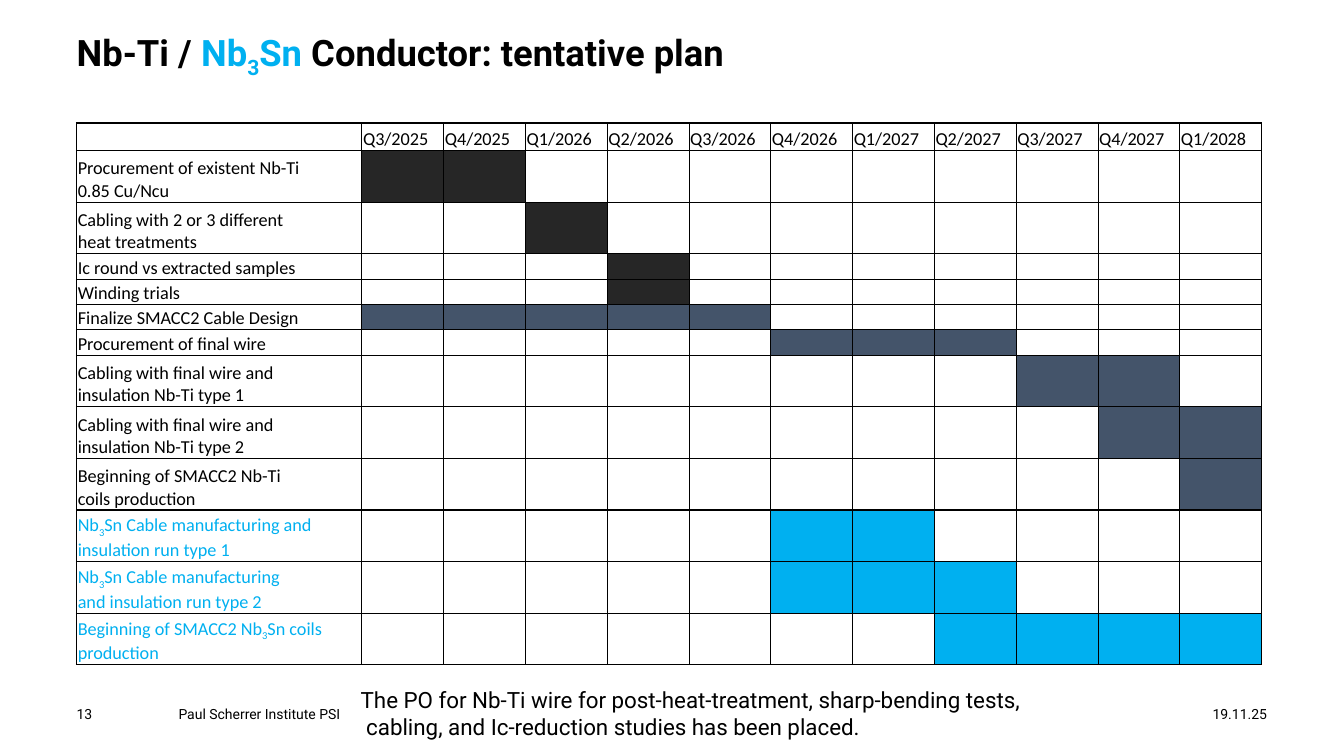
"""Build the conductor planning slide with its quarterly Gantt table."""
import lxml.etree
import pptx
import pptx.dml.color
import pptx.enum.text
import pptx.oxml.ns
import pptx.util
from dataclasses import dataclass

Cm = pptx.util.Cm
Pt = pptx.util.Pt
PP = pptx.enum.text


@dataclass(frozen=True)
class Theme:
    """Colours, fonts, type sizes and line widths."""
    black: str = "000000"
    sky: str = "00B0F0"
    trial: str = "262626"
    wire: str = "44546A"
    heading: str = "Roboto"
    body: str = "Calibri"
    title_size: int = 26
    note_size: int = 16
    table_size: int = 13
    footer_size: int = 10
    thick: float = 1
    thin: float = 0.5


theme = Theme()

TITLE = [("Nb-Ti / ", theme.black), ("Nb~3~Sn", theme.sky),
         (" Conductor: tentative plan", theme.black)]
QUARTERS = ["Q3/2025", "Q4/2025", "Q1/2026", "Q2/2026", "Q3/2026", "Q4/2026",
            "Q1/2027", "Q2/2027", "Q3/2027", "Q4/2027", "Q1/2028"]
TASKS = [
    ("Procurement of existent Nb-Ti\n0.85 Cu/Ncu", "Q3/2025", "Q4/2025", theme.trial),
    ("Cabling with 2 or 3 different\nheat treatments", "Q1/2026", "Q1/2026", theme.trial),
    ("Ic round vs extracted samples", "Q2/2026", "Q2/2026", theme.trial),
    ("Winding trials", "Q2/2026", "Q2/2026", theme.trial),
    ("Finalize SMACC2 Cable Design", "Q3/2025", "Q3/2026", theme.wire),
    ("Procurement of final wire", "Q4/2026", "Q2/2027", theme.wire),
    ("Cabling with final wire and\ninsulation Nb-Ti type 1", "Q3/2027", "Q4/2027", theme.wire),
    ("Cabling with final wire and\ninsulation Nb-Ti type 2", "Q4/2027", "Q1/2028", theme.wire),
    ("Beginning of SMACC2 Nb-Ti\ncoils production", "Q1/2028", "Q1/2028", theme.wire),
    ("Nb~3~Sn Cable manufacturing and\ninsulation run type 1", "Q4/2026", "Q1/2027", theme.sky),
    ("Nb~3~Sn Cable manufacturing\nand insulation run type 2", "Q4/2026", "Q2/2027", theme.sky),
    ("Beginning of SMACC2 Nb~3~Sn coils\nproduction", "Q2/2027", "Q1/2028", theme.sky),
]
NOTE = ["The PO for Nb-Ti wire for post-heat-treatment, sharp-bending tests,",
        "cabling, and Ic-reduction studies has been placed."]
LEFT = 1.93
FOOTER = [("19.11.25", 27.43, 4.5, PP.PP_ALIGN.RIGHT),
          ("Paul Scherrer Institute PSI", 4.5, 22.35, PP.PP_ALIGN.LEFT),
          ("13", LEFT, 1.96, PP.PP_ALIGN.LEFT)]
TABLE_TOP, TABLE_WIDTH, LABEL_WIDTH = 3.1, 29.87, 7.19
HEADER_HEIGHT, SINGLE_HEIGHT, DOUBLE_HEIGHT = 0.69, 0.64, 1.3
THICK_ROW_EDGES = {0, 1, 10, len(TASKS) + 1}
THICK_COLUMN_EDGES = {0, 1, len(QUARTERS) + 1}


def assign(target, values):
    """Set each named attribute on the target."""
    for name, value in values.items():
        setattr(target, name, value)


def write(para, text, size, face, color=theme.black, bold=False):
    """Add text to a paragraph, with ~x~ as subscript and newlines as breaks."""
    for row, line in enumerate(text.split("\n")):
        if row:
            para.add_line_break()
            lxml.etree.SubElement(para._p[-1], pptx.oxml.ns.qn("a:rPr"), sz=str(size * 100))
        for index, piece in enumerate(line.split("~")):
            span = para.add_run()
            span.text = piece
            assign(span.font, {"size": Pt(size), "name": face, "bold": bold})
            span.font.color.rgb = pptx.dml.color.RGBColor.from_string(color)
            if index % 2:
                span.font._element.set("baseline", "-25000")


def prepare(frame, wrap=True):
    """Clear the insets of a text frame and anchor it at the top."""
    assign(frame, {"margin_left": 0, "margin_right": 0, "margin_top": 0, "margin_bottom": 0,
                   "word_wrap": wrap, "vertical_anchor": PP.MSO_ANCHOR.TOP,
                   "auto_size": PP.MSO_AUTO_SIZE.NONE})


def add_text(page, lines, place, size, align=PP.PP_ALIGN.LEFT):
    """Add a text box with one paragraph per line."""
    frame = page.shapes.add_textbox(*map(Cm, place)).text_frame
    prepare(frame)
    for index, line in enumerate(lines):
        para = frame.add_paragraph() if index else frame.paragraphs[0]
        para.alignment = align
        write(para, line, size, theme.heading)
    return frame


def add_title(page):
    """Fill and place the title."""
    box = page.shapes.title
    assign(box, {"left": Cm(LEFT), "top": Cm(0.76), "width": Cm(24.9), "height": Cm(2.26)})
    prepare(box.text_frame)
    para = box.text_frame.paragraphs[0]
    para.alignment = PP.PP_ALIGN.LEFT
    for text, color in TITLE:
        write(para, text, theme.title_size, theme.heading, color, True)


def format_cell(cell, row, column, fill):
    """Set the borders, insets and fill of a cell."""
    assign(cell, {"margin_left": Cm(0.03), "margin_right": Cm(0.03), "margin_top": Cm(0.03),
                  "margin_bottom": 0, "vertical_anchor": PP.MSO_ANCHOR.BOTTOM})
    edges = {"lnL": column in THICK_COLUMN_EDGES, "lnR": column + 1 in THICK_COLUMN_EDGES,
             "lnT": row in THICK_ROW_EDGES, "lnB": row + 1 in THICK_ROW_EDGES}
    qn = pptx.oxml.ns.qn
    for tag, is_thick in edges.items():
        width = theme.thick if is_thick else theme.thin
        line = lxml.etree.SubElement(cell._tc.get_or_add_tcPr(), qn("a:" + tag), w=str(Pt(width)))
        paint = lxml.etree.SubElement(line, qn("a:solidFill"))
        lxml.etree.SubElement(paint, qn("a:srgbClr"), val=theme.black)
    if fill:
        cell.fill.solid()
        cell.fill.fore_color.rgb = pptx.dml.color.RGBColor.from_string(fill)
    else:
        cell.fill.background()


def add_plan(page):
    """Add the Gantt table."""
    heights = [HEADER_HEIGHT] + [DOUBLE_HEIGHT if "\n" in task[0] else SINGLE_HEIGHT
                                 for task in TASKS]
    quarter_width = (TABLE_WIDTH - LABEL_WIDTH) / len(QUARTERS)
    widths = [LABEL_WIDTH] + [quarter_width] * len(QUARTERS)
    place = map(Cm, (LEFT, TABLE_TOP, TABLE_WIDTH, sum(heights)))
    plan = page.shapes.add_table(len(heights), len(widths), *place).table
    assign(plan, {"first_row": False, "horz_banding": False})
    for column, width in zip(plan.columns, widths):
        column.width = Cm(width)
    for row, height in enumerate(heights):
        plan.rows[row].height = Cm(height)
        label, start, end, color = TASKS[row - 1] if row else ("", "", "", "")
        for column in range(len(widths)):
            text, fill = "", None
            if column == 0:
                text = label
            elif row == 0:
                text = QUARTERS[column - 1]
            elif QUARTERS.index(start) < column <= QUARTERS.index(end) + 1:
                fill = color
            cell = plan.cell(row, column)
            format_cell(cell, row, column, fill)
            para = cell.text_frame.paragraphs[0]
            if text:
                ink = theme.sky if color == theme.sky else theme.black
                write(para, text, theme.table_size, theme.body, ink)
            else:
                lxml.etree.SubElement(para._p, pptx.oxml.ns.qn("a:endParaRPr"),
                                      sz=str(theme.table_size * 100))


def main():
    """Assemble and save the deck."""
    deck = pptx.Presentation()
    assign(deck, {"slide_width": Cm(33.87), "slide_height": Cm(19.05)})
    page = deck.slides.add_slide(deck.slide_layouts[5])
    add_title(page)
    for text, left, width, align in FOOTER:
        add_text(page, [text], (left, 17.78, width, 0.41), theme.footer_size, align)
    add_plan(page)
    note = add_text(page, NOTE, (9.09, 17.3, 20.75, 1.37), theme.note_size)
    note.paragraphs[1]._p.get_or_add_pPr().set("marL", str(Cm(0.14)))
    deck.save("out.pptx")


if __name__ == "__main__":
    main()
